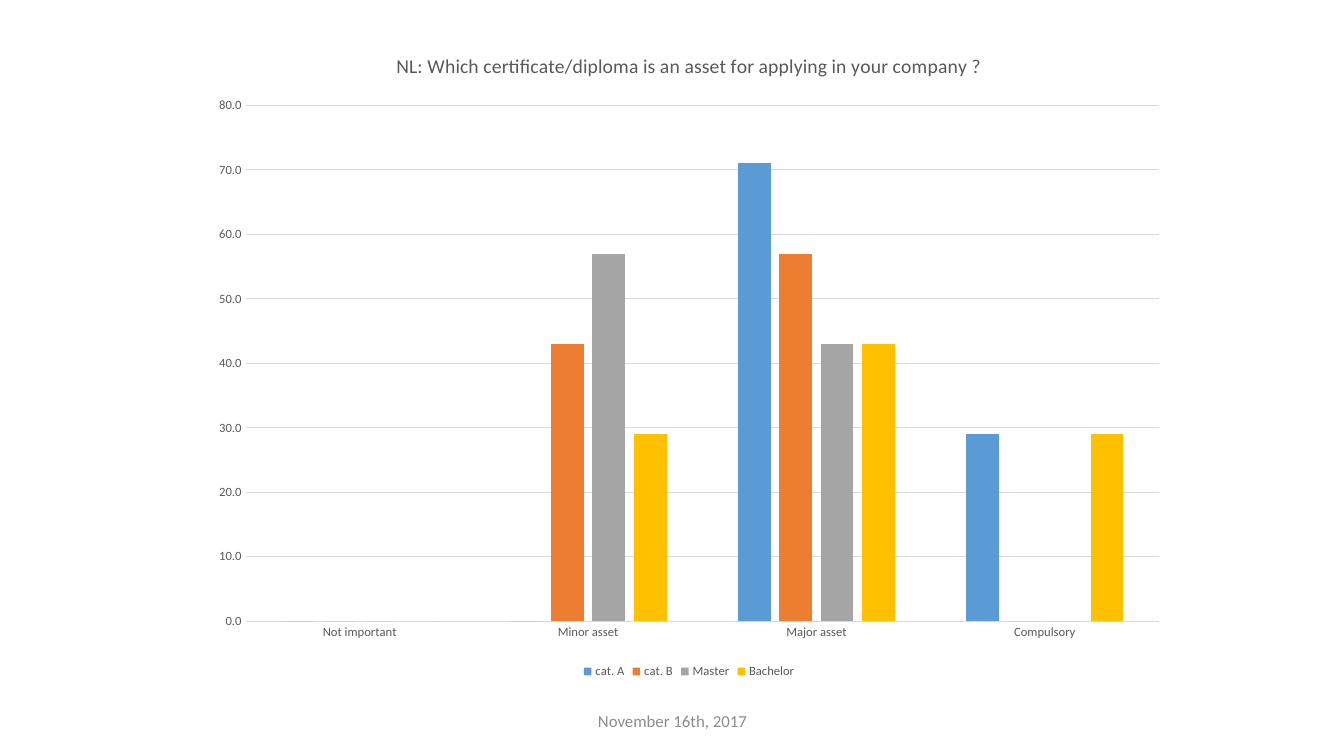
from pptx import Presentation
from pptx.chart.data import CategoryChartData
from pptx.dml.color import RGBColor
from pptx.enum.chart import XL_CHART_TYPE, XL_LEGEND_POSITION, XL_TICK_MARK
from pptx.enum.text import MSO_ANCHOR, PP_ALIGN
from pptx.util import Inches, Pt

COLUMNS = XL_CHART_TYPE.COLUMN_CLUSTERED
BOTTOM = XL_LEGEND_POSITION.BOTTOM
NO_TICK = XL_TICK_MARK.NONE
MIDDLE = MSO_ANCHOR.MIDDLE
CENTER = PP_ALIGN.CENTER

QUESTION = "NL: Which certificate/diploma is an asset for applying in your company ?"
RATINGS = ["Not important", "Minor asset", "Major asset", "Compulsory"]
# Diploma: (colour, percentage of answers per rating)
DIPLOMAS = {
    "cat. A": ("5B9BD5", [0, 0, 71, 29]),
    "cat. B": ("ED7D31", [0, 43, 57, 0]),
    "Master": ("A5A5A5", [0, 57, 43, 0]),
    "Bachelor": ("FFC000", [0, 29, 43, 29]),
}


def color(hex_text):
    return RGBColor.from_string(hex_text)


class SurveyPage:
    font_name = "Calibri"
    text_color = "595959"
    line_color = "D9D9D9"
    date_color = "8C8C8C"

    def __init__(self, deck):
        self.deck = deck
        self.page = deck.slides.add_slide(deck.slide_layouts[6])

    def place(self, left, top, width, height):
        """Turn percentages of the slide's size into lengths."""
        wide, high = self.deck.slide_width / 100, self.deck.slide_height / 100
        return int(left * wide), int(top * high), int(width * wide), int(height * high)

    def style_font(self, font, size, hex_text=text_color):
        font.name = self.font_name
        font.size = Pt(size)
        font.bold = False
        font.color.rgb = color(hex_text)

    def style_line(self, line):
        line.color.rgb = color(self.line_color)
        line.width = Pt(0.75)

    def add_date(self, text, *shares):
        box = self.page.shapes.add_textbox(*self.place(*shares))
        frame = box.text_frame
        frame.word_wrap = True
        frame.vertical_anchor = MIDDLE
        frame.text = text
        para = frame.paragraphs[0]
        para.alignment = CENTER
        self.style_font(para.runs[0].font, 12, self.date_color)

    def add_columns(self, title, categories, groups, *shares):
        data = CategoryChartData(number_format="0.0")
        data.categories = categories
        for name, (_, values) in groups.items():
            data.add_series(name, values)
        chart = self.page.shapes.add_chart(COLUMNS, *self.place(*shares), data).chart
        self.style_font(chart.font, 10, "000000")

        # Title and legend
        chart.has_title = True
        frame = chart.chart_title.text_frame
        frame.text = title
        self.style_font(frame.paragraphs[0].runs[0].font, 14)
        chart.chart_title.include_in_layout = False
        chart.has_legend = True
        chart.legend.position = BOTTOM
        chart.legend.include_in_layout = False
        self.style_font(chart.legend.font, 9)

        # Axes and gridlines
        for axis in (chart.category_axis, chart.value_axis):
            axis.major_tick_mark = axis.minor_tick_mark = NO_TICK
            self.style_font(axis.tick_labels.font, 9)
        self.style_line(chart.category_axis.format.line)
        scale = chart.value_axis
        scale.minimum_scale, scale.maximum_scale, scale.major_unit = 0, 80, 10
        scale.tick_labels.number_format = "0.0"
        scale.tick_labels.number_format_is_linked = False
        scale.format.line.fill.background()
        self.style_line(scale.major_gridlines.format.line)

        # Columns
        plot = chart.plots[0]
        plot.vary_by_categories = False
        plot.gap_width = 219
        plot.overlap = -27
        for series, (fill_color, _) in zip(plot.series, groups.values()):
            series.invert_if_negative = False
            series.format.fill.solid()
            series.format.fill.fore_color.rgb = color(fill_color)


def main():
    deck = Presentation()
    deck.slide_width, deck.slide_height = Inches(13.33), Inches(7.5)
    survey = SurveyPage(deck)
    survey.add_date("November 16th, 2017", 33.16, 92.67, 33.76, 5.33)
    survey.add_columns(QUESTION, RATINGS, DIPLOMAS, 14.85, 4.07, 72.84, 86.27)
    deck.save("out.pptx")


if __name__ == "__main__":
    main()
